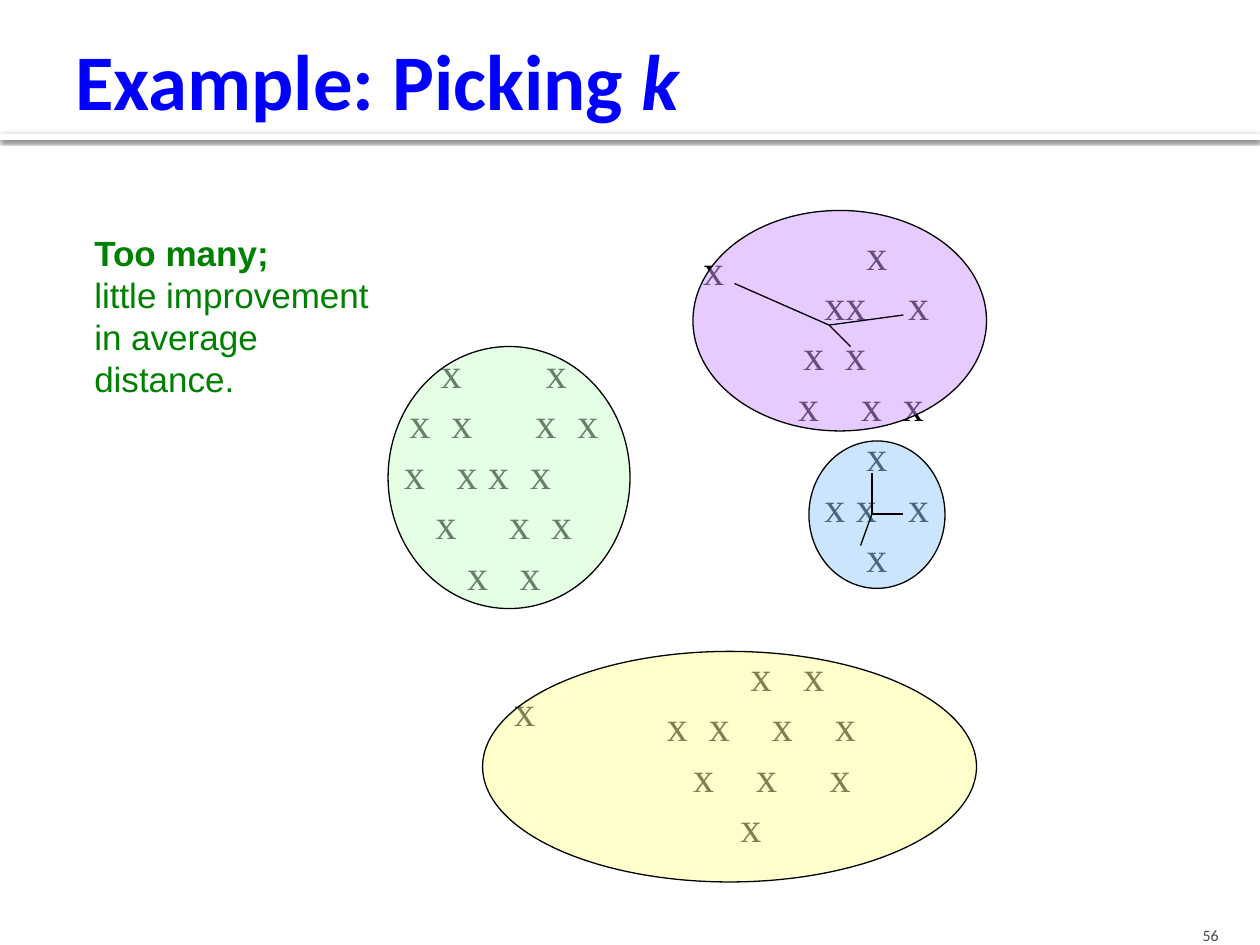
from lxml import etree
from pptx import Presentation
from pptx.dml.color import RGBColor
from pptx.enum import shapes, text
from pptx.oxml import ns, xmlchemy
from pptx.util import Inches, Pt

BLACK = RGBColor(0, 0, 0)
WHITE = RGBColor(255, 255, 255)
BLUE = RGBColor(0, 0, 255)
GREEN = RGBColor(0, 128, 0)
GRAY = RGBColor(0x45, 0x45, 0x45)
YELLOW = RGBColor(0xFF, 0xFF, 0x99)
MINT = RGBColor(0xCC, 0xFF, 0xCC)
LILAC = RGBColor(0xCC, 0x99, 0xFF)
SKY = RGBColor(0x99, 0xCC, 0xFF)

CELL = 1 / 12  # grid step of the points; each x is two cells wide

# Points: box, then for each row the cells where an x starts
POINTS = [
    ((3, 2.5, 2, 2.5),
     [[6, 16], [3, 7, 15, 19], [2.5, 7.5, 10.5, 14.5], [5.5, 12.5, 16.5], [8.5, 13.5]]),
    ((6, 1.67, 1.92, 3.08),
     [[10.5], [6.5, 8.5, 14.5], [4.5, 8.5], [4, 10, 14], [10.5], [6.5, 9.5, 14.5], [10.5]]),
    ((5, 5.08, 2.08, 1.75),
     [[11.5, 16.5], [3.5, 7.5, 13.5, 19.5], [6, 12, 19], [10.5]]),
    ((5.58, 1.88, 0.27, 0.5), [[0]]),
    ((4.08, 5.38, 0.27, 0.5), [[0]]),
]
RINGS = [
    ((3.83, 5.17, 3.92, 1.83), YELLOW),
    ((3.08, 2.75, 1.92, 2.08), MINT),
    ((5.5, 1.67, 2.33, 1.75), LILAC),
    ((6.42, 3.5, 1.08, 1.17), SKY),
]
# Centre of a cluster and the ends of its distance lines
STARS = [
    ((6.58, 2.58), [(5.83, 2.25), (7.17, 2.5), (6.75, 2.75)]),
    ((6.92, 4.08), [(6.92, 3.75), (7.17, 4.08), (6.83, 4.33)]),
]


def inch(vals):
    return [Inches(v) for v in vals]


def frame(shape, pads, anchor, wrap=True):
    tf = shape.text_frame
    tf.margin_left, tf.margin_top, tf.margin_right, tf.margin_bottom = inch(pads)
    tf.vertical_anchor = anchor
    tf.word_wrap = wrap
    return tf


def add_run(par, words, face, size, color, bold=False, italic=False):
    run = par.add_run()
    run.text = words
    font = run.font
    font.name, font.size, font.bold, font.italic = face, Pt(size), bold, italic
    font.color.rgb = color


def add_par(tf, num):
    return tf.add_paragraph() if num else tf.paragraphs[0]


def add_head(slide, box):
    # Ruled bar with a soft shadow below it
    bar = slide.shapes.add_shape(shapes.MSO_SHAPE.RECTANGLE, *inch((0, 1.06, 10, 0.05)))
    bar.fill.solid()
    bar.fill.fore_color.rgb = WHITE
    bar.line.fill.background()
    bar.shadow.inherit = False
    glow = etree.SubElement(
        bar.element.spPr.find(ns.qn("a:effectLst")), ns.qn("a:outerShdw"),
        blurRad=str(Pt(2.5)), dist=str(Pt(0.8)), dir="5400000", rotWithShape="0")
    tint = etree.SubElement(glow, ns.qn("a:srgbClr"), val=str(BLACK))
    etree.SubElement(tint, ns.qn("a:alpha"), val="60000")
    # Title
    title = slide.shapes.title
    title.left, title.top, title.width, title.height = inch(box)
    tf = frame(title, (0.1, 0.05, 0.05, 0.05), text.MSO_ANCHOR.MIDDLE)
    tf.auto_size = text.MSO_AUTO_SIZE.NONE
    par = tf.paragraphs[0]
    par.alignment = text.PP_ALIGN.LEFT
    add_run(par, "Example: Picking ", "Calibri", 45, BLUE, True)
    add_run(par, "k", "Calibri", 45, BLUE, True, True)


def add_points(slide, box, rows):
    tf = frame(slide.shapes.add_textbox(*inch(box)), (0, 0, 0, 0), text.MSO_ANCHOR.MIDDLE)
    for num, row in enumerate(rows):
        par = add_par(tf, num)
        par.line_spacing = Pt(28.8)
        tabs = etree.SubElement(par._p.get_or_add_pPr(), ns.qn("a:tabLst"))
        words, end = "", 0
        for cell in row:
            if cell > end:  # touching points need no tab
                words += "\t"
                etree.SubElement(tabs, ns.qn("a:tab"), pos=str(Inches(cell * CELL)), algn="l")
            words += "x"
            end = cell + 2
        add_run(par, words, "Times New Roman", 24, BLACK)


def add_ring(slide, box, color):
    ring = slide.shapes.add_shape(shapes.MSO_SHAPE.OVAL, *inch(box))
    ring.shadow.inherit = False
    ring.fill.solid()
    ring.fill.fore_color.rgb = color
    tint = ring.element.spPr.find(ns.qn("a:solidFill"))[0]
    etree.SubElement(tint, ns.qn("a:alpha"), val="50000")
    ring.line.color.rgb = BLACK
    ring.line.width = Pt(0.75)


def add_star(slide, hub, tips):
    group = slide.shapes.add_group_shape()
    for tip in tips:
        line = group.shapes.add_connector(shapes.MSO_CONNECTOR.STRAIGHT, *inch(hub + tip))
        line.line.color.rgb = BLACK
        line.line.width = Pt(0.75)
        etree.SubElement(line.element.spPr, ns.qn("a:effectLst"))


def add_note(slide, box):
    tf = frame(slide.shapes.add_textbox(*inch(box)), (0.1, 0.05, 0.1, 0.05),
               text.MSO_ANCHOR.TOP, False)
    for num, words in enumerate(["Too many;", "little improvement", "in average", "distance."]):
        par = add_par(tf, num)
        par.line_spacing = Pt(24)
        add_run(par, words, "Arial", 20, GREEN, num == 0)


def add_foot(slide, box):
    tf = frame(slide.shapes.add_textbox(*inch(box)), (0.1, 0.05, 0.1, 0),
               text.MSO_ANCHOR.BOTTOM)
    par = tf.paragraphs[0]
    par.alignment = text.PP_ALIGN.RIGHT
    add_run(par, "56", "Calibri", 9, GRAY)


def main():
    deck = Presentation()
    deck.slide_width, deck.slide_height = inch((10, 7.5))
    slide = deck.slides.add_slide(deck.slide_layouts[5])
    add_head(slide, (0.5, 0.17, 9, 0.92))
    for box, rows in POINTS:
        add_points(slide, box, rows)
    for box, color in RINGS:
        add_ring(slide, box, color)
    for hub, tips in STARS:
        add_star(slide, hub, tips)
    add_note(slide, (0.65, 1.79, 2.4, 1.45))
    add_foot(slide, (8.97, 7.2, 0.8, 0.3))
    deck.save("out.pptx")


if __name__ == "__main__":
    main()
